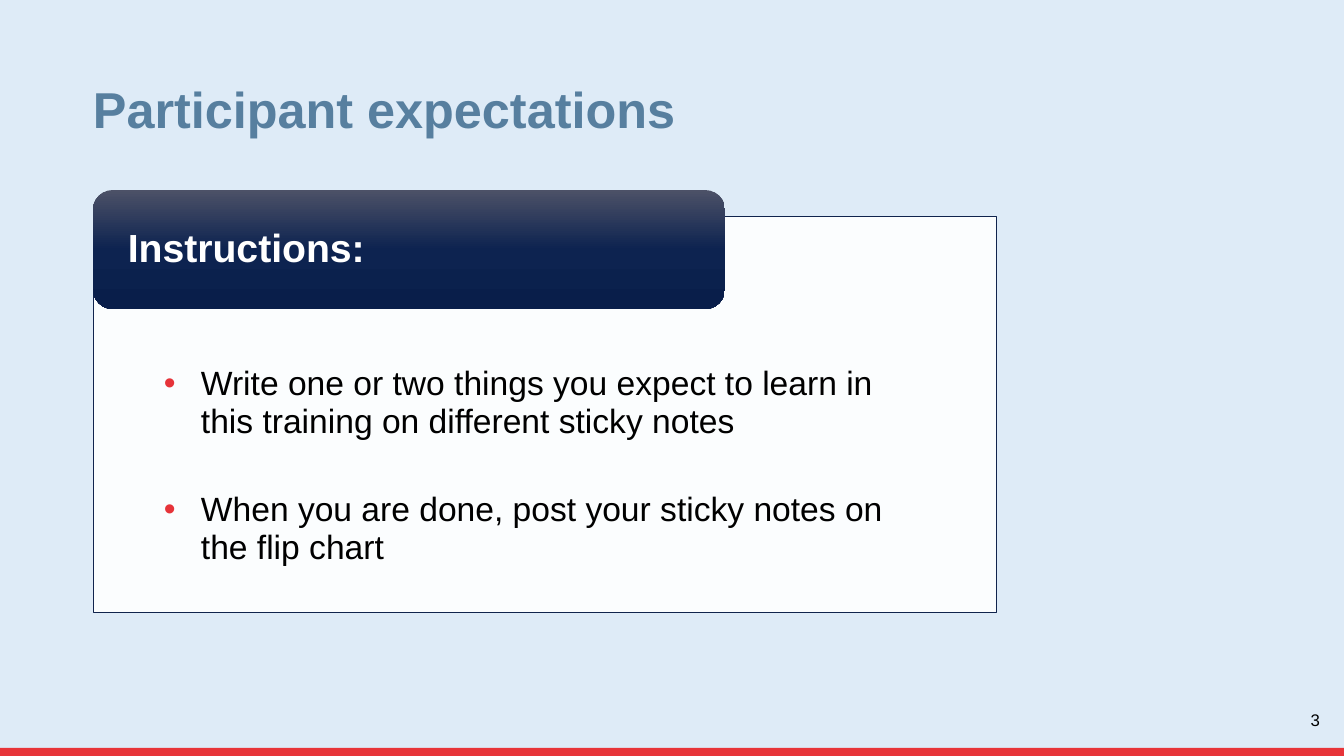
from copy import deepcopy

from lxml.etree import SubElement
from pptx import Presentation
from pptx.dml.color import RGBColor
from pptx.enum.shapes import MSO_SHAPE as Shape
from pptx.enum.text import MSO_ANCHOR as Anchor, MSO_AUTO_SIZE as AutoSize, PP_ALIGN as Align
from pptx.oxml.ns import qn
from pptx.util import Emu, Pt

PX = 914400 / 100.8
WIDTH, HEIGHT = 1344, 756
FONT = "Arial"
PALE_BLUE = RGBColor(0xDE, 0xEB, 0xF7)
STEEL = RGBColor(0x57, 0x7F, 0x9F)
NAVY = RGBColor(0x10, 0x24, 0x4D)
RED = RGBColor(0xE7, 0x34, 0x39)
BULLET_RED = RGBColor(0xE6, 0x33, 0x39)
WHITE = RGBColor(0xFF, 0xFF, 0xFF)
BLACK = RGBColor(0, 0, 0)
HEADER_STOPS = [
    (0, RGBColor(0x4C, 0x51, 0x67)),
    (0.5, RGBColor(0x0D, 0x23, 0x50)),
    (1, RGBColor(0x09, 0x1E, 0x4A)),
]
INSTRUCTIONS = [
    "Write one or two things you expect to learn in this training on different sticky notes",
    "When you are done, post your sticky notes on the flip chart",
]


def px(length):
    return Emu(round(length * PX))


def place(shape, box):
    shape.left, shape.top, shape.width, shape.height = map(px, box)


def set_frame(frame, insets, anchor):
    frame.word_wrap = True
    frame.auto_size = AutoSize.NONE
    frame.vertical_anchor = anchor
    (frame.margin_left, frame.margin_top,
     frame.margin_right, frame.margin_bottom) = map(px, insets)


def write(paragraph, text, size, color, bold=False, align=Align.LEFT, spacing=0.9):
    paragraph.alignment = align
    paragraph.line_spacing = spacing
    paragraph.space_before = Pt(0)
    run = paragraph.add_run()
    run.text = text
    run.font.name = FONT
    run.font.size = Pt(size)
    run.font.bold = bold
    run.font.color.rgb = color


def add_bullet(paragraph, indent):
    props = paragraph._p.get_or_add_pPr()
    props.set("marL", str(px(indent)))
    props.set("indent", str(-px(indent)))
    bullet_color = SubElement(props, qn("a:buClr"))
    SubElement(bullet_color, qn("a:srgbClr"), val=str(BULLET_RED))
    SubElement(props, qn("a:buFont"), typeface=FONT)
    SubElement(props, qn("a:buChar"), char="•")


def draw_backdrop(slide, band_height):
    slide.background.fill.solid()
    slide.background.fill.fore_color.rgb = PALE_BLUE
    band = slide.shapes.add_shape(
        Shape.RECTANGLE, 0, px(HEIGHT - band_height), px(WIDTH), px(band_height))
    band.shadow.inherit = False
    band.fill.solid()
    band.fill.fore_color.rgb = RED
    band.line.fill.background()


def draw_title(slide, box):
    title = slide.shapes.title
    place(title, box)
    set_frame(title.text_frame, (0, 20, 0, 20), Anchor.TOP)
    write(title.text_frame.paragraphs[0], "Participant expectations", 36, STEEL, bold=True)


def draw_instructions(slide, box):
    panel = slide.placeholders[1]
    place(panel, box)
    panel.fill.solid()
    panel.fill.fore_color.rgb = WHITE
    fill_color = panel._element.spPr.find(qn("a:solidFill"))[0]
    SubElement(fill_color, qn("a:alpha"), val="90000")
    panel.line.color.rgb = NAVY
    panel.line.width = Pt(0.5)
    frame = panel.text_frame
    set_frame(frame, (71, 149, 71, 19), Anchor.TOP)
    for index, instruction in enumerate(INSTRUCTIONS):
        paragraph = frame.add_paragraph() if index else frame.paragraphs[0]
        add_bullet(paragraph, 37)
        write(paragraph, instruction, 24, BLACK, spacing=0.95)
        paragraph.space_after = Pt(0 if index else 35)

    left, top, width, _ = box
    draw_header(slide, (left, top - 26, width * 7 // 10, 119))


def draw_header(slide, box):
    header = slide.shapes.add_shape(Shape.ROUNDED_RECTANGLE, *map(px, box))
    header.shadow.inherit = False
    header.line.fill.background()
    header.fill.gradient()
    stop_list = header._element.spPr.find(".//" + qn("a:gsLst"))
    stop_list.append(deepcopy(stop_list[0]))
    for stop, (position, color) in zip(header.fill.gradient_stops, HEADER_STOPS):
        stop.position = position
        stop.color.rgb = color
    header.fill.gradient_angle = 270
    set_frame(header.text_frame, (29, 0, 29, 0), Anchor.MIDDLE)
    write(header.text_frame.paragraphs[0], "Instructions:", 28, WHITE, bold=True)


def draw_page_number(slide, box):
    number = slide.shapes.add_textbox(*map(px, box))
    set_frame(number.text_frame, (2, 5, 2, 5), Anchor.MIDDLE)
    write(number.text_frame.paragraphs[0], "3", 12, BLACK, align=Align.RIGHT)


def main():
    deck = Presentation()
    deck.slide_width, deck.slide_height = px(WIDTH), px(HEIGHT)
    slide = deck.slides.add_slide(deck.slide_layouts[1])
    draw_backdrop(slide, 8)
    draw_title(slide, (93, 65, 941, 88))
    draw_instructions(slide, (93, 216, 903, 396))
    draw_page_number(slide, (1020, 701, 302, 40))
    deck.save("out.pptx")


if __name__ == "__main__":
    main()
